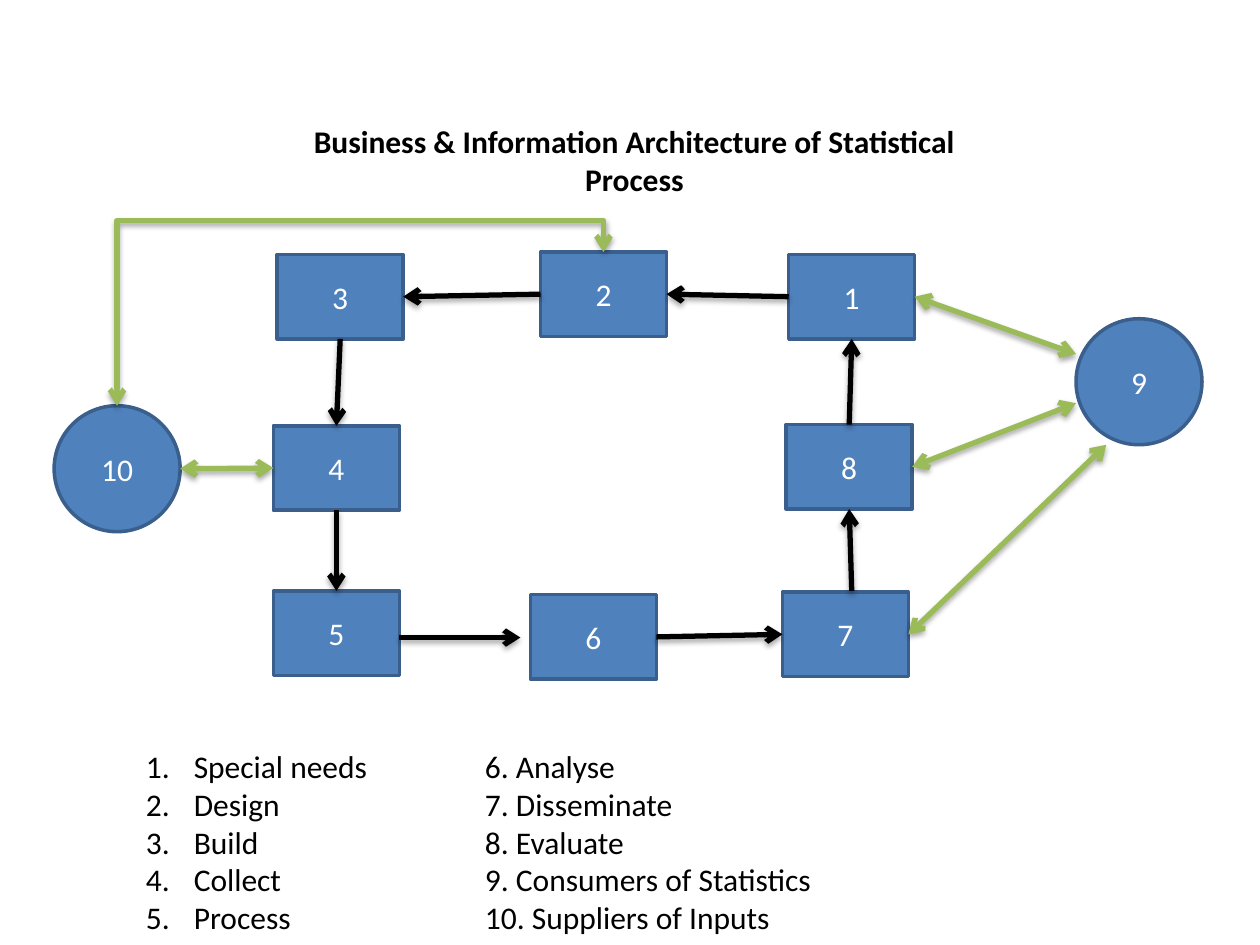
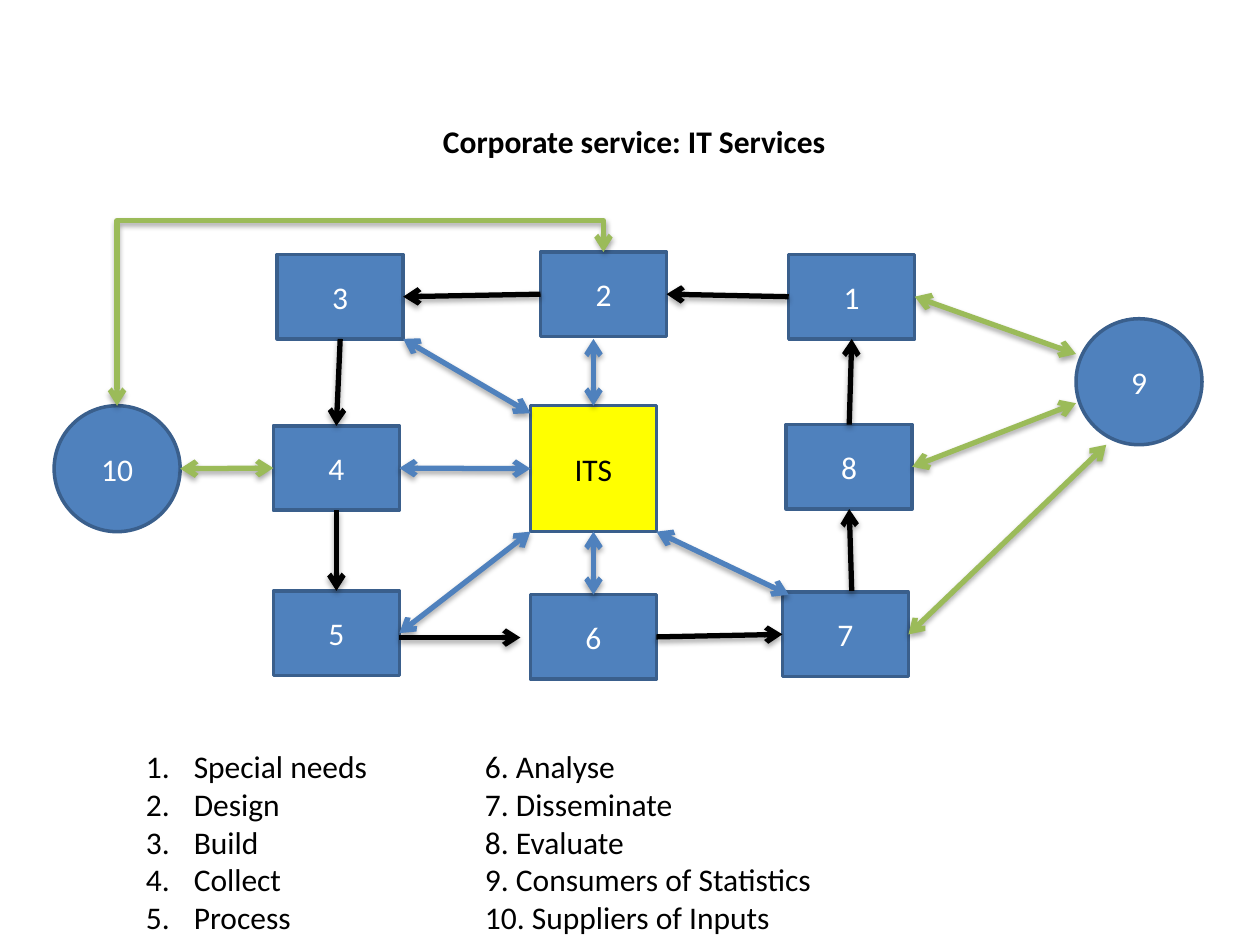
from lxml.etree import SubElement
from pptx import Presentation
from pptx.dml.color import RGBColor
from pptx.enum.shapes import MSO_CONNECTOR, MSO_SHAPE
from pptx.enum.text import MSO_ANCHOR, MSO_AUTO_SIZE, PP_ALIGN
from pptx.oxml import parse_xml
from pptx.oxml.ns import nsdecls, qn
from pptx.util import Pt

EMU_PER_PX = 9144
FONT = "Calibri"
BLACK = RGBColor(0x00, 0x00, 0x00)
WHITE = RGBColor(0xFF, 0xFF, 0xFF)
BLUE = RGBColor(0x4F, 0x81, 0xBD)
DARK_BLUE = RGBColor(0x3A, 0x5F, 0x8C)
GREEN = RGBColor(0x9B, 0xBB, 0x59)
YELLOW = RGBColor(0xFF, 0xFF, 0x00)
TOP, LEFT, BOTTOM, RIGHT = range(4)

STEP_SIZE = (100, 67)
ROUND_SIZE = (100, 100)
STEPS = {"6": (421, 472), "3": (220, 202), "8": (624, 337), "2": (429, 200),
         "7": (621, 470), "5": (217, 469), "4": (217, 338), "1": (626, 202)}
PARTIES = {"9": (854, 253), "10": (43, 322)}
FLOW = [
    ((676, 469), ("8", BOTTOM)),
    (("8", TOP), ("1", BOTTOM)),
    (("1", LEFT), ("2", RIGHT)),
    (("2", LEFT), ("3", RIGHT)),
    (("3", BOTTOM), ("4", TOP)),
    (("4", BOTTOM), ("5", TOP)),
    ((317, 506), (413, 506)),
    (("6", RIGHT), ("7", LEFT)),
]
EXCHANGES = [
    (("8", RIGHT), (854, 320)),
    (("1", RIGHT), (854, 281)),
    ((143, 372), ("4", LEFT)),
    (("7", RIGHT), (878, 353)),
]
SERVICE_LINKS = [
    (("ITS", TOP), (471, 269)),
    ((421, 328), (320, 269)),
    (("ITS", LEFT), ("4", RIGHT)),
    ((421, 422), ("5", RIGHT)),
    ((521, 422), (626, 472)),
    (("ITS", BOTTOM), ("6", TOP)),
]
NUMBERED_STEPS = ["Special needs", "Design", "Build", "Collect", "Process"]
OTHER_ENTRIES = ["6. Analyse", "7. Disseminate", "8. Evaluate",
                 "9. Consumers of Statistics", "10. Suppliers of Inputs"]


def px(length):
    """Turn px into EMU."""
    return round(length * EMU_PER_PX)


def place(shape, left, top, width, height):
    """Move and size a shape in px."""
    shape.left, shape.top = px(left), px(top)
    shape.width, shape.height = px(width), px(height)


def add_run(paragraph, text, color=BLACK, bold=False):
    """Add one run in the common font."""
    run = paragraph.add_run()
    run.text = text
    run.font.name = FONT
    run.font.size = Pt(18)
    run.font.bold = bold
    run.font.color.rgb = color


def set_title(slide, text, height):
    """Place and fill the title placeholder."""
    title = slide.shapes.title
    place(title, 217, 92, 573, height)
    frame = title.text_frame
    frame.auto_size = MSO_AUTO_SIZE.NONE
    frame.vertical_anchor = MSO_ANCHOR.TOP
    paragraph = frame.paragraphs[0]
    paragraph.alignment = PP_ALIGN.CENTER
    add_run(paragraph, text, bold=True)


def add_node(slide, kind, label, position, size, fill=BLUE, color=WHITE):
    """Add a labelled, outlined node."""
    node = slide.shapes.add_shape(kind, *map(px, position + size))
    node.shadow.inherit = False
    node.fill.solid()
    node.fill.fore_color.rgb = fill
    node.line.color.rgb = DARK_BLUE
    node.line.width = Pt(2)
    frame = node.text_frame
    frame.vertical_anchor = MSO_ANCHOR.MIDDLE
    frame.paragraphs[0].alignment = PP_ALIGN.CENTER
    add_run(frame.paragraphs[0], label, color)
    return node


def style_arrow(connector, color, two_way):
    """Give a connector its colour, arrowheads and soft shadow."""
    connector.line.color.rgb = color
    connector.line.width = Pt(3)
    outline = connector.line._get_or_add_ln()
    if two_way:
        SubElement(outline, qn("a:headEnd"), type="arrow")
    SubElement(outline, qn("a:tailEnd"), type="arrow")
    connector._element.spPr.append(parse_xml(
        f'<a:effectLst {nsdecls("a")}>'
        '<a:outerShdw blurRad="40000" dist="23000" dir="5400000" rotWithShape="0">'
        '<a:srgbClr val="000000"><a:alpha val="35000"/></a:srgbClr>'
        '</a:outerShdw></a:effectLst>'))


def add_arrow(slide, nodes, start, end, color, two_way):
    """Add a straight arrow between points or (node, side) joints."""
    connector = slide.shapes.add_connector(MSO_CONNECTOR.STRAIGHT, 0, 0, 0, 0)
    if start[0] in nodes:
        connector.begin_connect(nodes[start[0]], start[1])
    else:
        connector.begin_x, connector.begin_y = map(px, start)
    if end[0] in nodes:
        connector.end_connect(nodes[end[0]], end[1])
    else:
        connector.end_x, connector.end_y = map(px, end)
    style_arrow(connector, color, two_way)


def add_supply_loop(slide, nodes):
    """Add the bent arrow that joins the tops of nodes 2 and 10."""
    connector = slide.shapes.add_connector(MSO_CONNECTOR.ELBOW, 0, 0, 0, 0)
    connector.begin_connect(nodes["2"], TOP)
    connector.end_connect(nodes["10"], TOP)
    place(connector, 225, 68, 122, 386)
    properties = connector._element.spPr
    transform = properties.find(qn("a:xfrm"))
    for name, value in (("rot", "16200000"), ("flipH", "1"), ("flipV", "1")):
        transform.set(name, value)
    geometry = properties.find(qn("a:prstGeom"))
    guides = geometry.find(qn("a:avLst"))
    if guides is None:
        guides = SubElement(geometry, qn("a:avLst"))
    SubElement(guides, qn("a:gd"), name="adj1", fmla="val -20500")
    style_arrow(connector, GREEN, True)


def add_legend(slide, box, entries, numbered=False):
    """Add a list of entries, numbered automatically if asked."""
    frame = slide.shapes.add_textbox(*map(px, box)).text_frame
    frame.word_wrap = True
    for index, entry in enumerate(entries):
        paragraph = frame.add_paragraph() if index else frame.paragraphs[0]
        if numbered:
            properties = paragraph._p.get_or_add_pPr()
            properties.set("marL", str(px(38)))
            properties.set("indent", str(px(-38)))
            SubElement(properties, qn("a:buFont"), typeface=FONT)
            SubElement(properties, qn("a:buAutoNum"), type="arabicPeriod")
        add_run(paragraph, entry)


def add_process_slide(presentation, title, title_height):
    """Add a slide with the statistical process; return it and its nodes."""
    slide = presentation.slides.add_slide(presentation.slide_layouts[5])
    set_title(slide, title, title_height)
    nodes = {}
    for kind, size, positions in (
            (MSO_SHAPE.FLOWCHART_PROCESS, STEP_SIZE, STEPS),
            (MSO_SHAPE.OVAL, ROUND_SIZE, PARTIES)):
        for label, position in positions.items():
            nodes[label] = add_node(slide, kind, label, position, size)
    for start, end in FLOW:
        add_arrow(slide, nodes, start, end, BLACK, False)
    for start, end in EXCHANGES:
        add_arrow(slide, nodes, start, end, GREEN, True)
    add_supply_loop(slide, nodes)
    add_legend(slide, (106, 588, 197, 162), NUMBERED_STEPS, numbered=True)
    add_legend(slide, (375, 588, 328, 222), OTHER_ENTRIES)
    return slide, nodes


def add_services(slide, nodes):
    """Add the IT services hub and its links to the process."""
    nodes["ITS"] = add_node(slide, MSO_SHAPE.RECTANGLE, "ITS", (421, 322),
                            ROUND_SIZE, YELLOW, BLACK)
    for start, end in SERVICE_LINKS:
        add_arrow(slide, nodes, start, end, BLUE, True)


def main():
    """Build and save both slides."""
    presentation = Presentation()
    presentation.slide_width, presentation.slide_height = px(1000), px(750)
    add_process_slide(
        presentation, "Business & Information Architecture of Statistical Process", 71)
    slide, nodes = add_process_slide(
        presentation, "Corporate service: IT Services", 40)
    add_services(slide, nodes)
    presentation.save("out.pptx")


if __name__ == "__main__":
    main()
